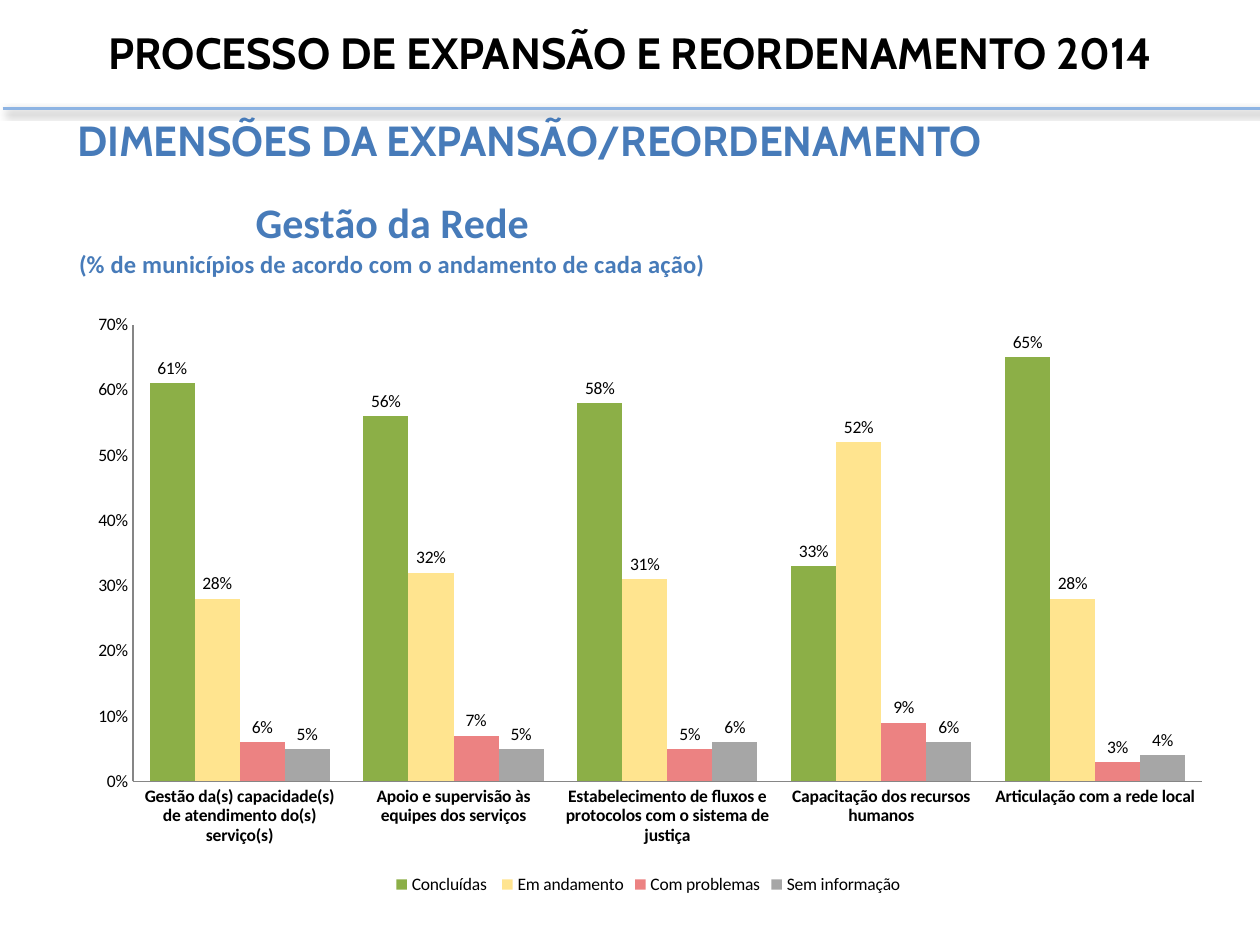
from dataclasses import dataclass

from lxml.etree import SubElement
from pptx import Presentation
from pptx.chart.data import CategoryChartData
from pptx.dml.color import RGBColor as Color
from pptx.enum.chart import XL_CHART_TYPE as ChartType
from pptx.enum.chart import XL_LABEL_POSITION as LabelPosition
from pptx.enum.chart import XL_LEGEND_POSITION as LegendPosition
from pptx.enum.chart import XL_TICK_MARK as TickMark
from pptx.enum.shapes import MSO_CONNECTOR as Connector
from pptx.enum.text import MSO_ANCHOR as Anchor
from pptx.enum.text import MSO_AUTO_SIZE as AutoSize
from pptx.enum.text import PP_ALIGN as Align
from pptx.oxml import parse_xml
from pptx.oxml.ns import nsdecls, qn
from pptx.util import Pt


@dataclass(frozen=True)
class Theme:
    heading_font: str = "Cabin"
    body_font: str = "Calibri"
    text: str = "000000"
    accent: str = "477BB9"
    rule: str = "8EB4E3"
    axis: str = "868686"
    title_size: int = 25
    subtitle_size: int = 24
    caption_size: int = 14
    chart_size: int = 10


THEME = Theme()

CATEGORIES = (
    "Gestão da(s) capacidade(s) de atendimento do(s) serviço(s)",
    "Apoio e supervisão às equipes dos serviços",
    "Estabelecimento de fluxos e protocolos com o sistema de justiça",
    "Capacitação dos recursos humanos",
    "Articulação com a rede local",
)
SERIES = (
    ("Concluídas ", "8CAF47", (0.61, 0.56, 0.58, 0.33, 0.65)),
    ("Em andamento", "FFE48F", (0.28, 0.32, 0.31, 0.52, 0.28)),
    ("Com problemas", "EC8282", (0.06, 0.07, 0.05, 0.09, 0.03)),
    ("Sem informação ", "A6A6A6", (0.05, 0.05, 0.06, 0.06, 0.04)),
)


def style_font(font, name, size, color, bold=False):
    font.name = name
    font.size = Pt(size)
    font.bold = bold
    font.color.rgb = Color.from_string(color)


def shadow_effect():
    return parse_xml(
        f'<a:effectLst {nsdecls("a")}>'
        f'<a:outerShdw blurRad="{Pt(4)}" dist="{Pt(3)}" dir="2700000" algn="tl" rotWithShape="0">'
        '<a:srgbClr val="000000"><a:alpha val="40000"/></a:srgbClr>'
        "</a:outerShdw></a:effectLst>"
    )


def set_layout(parent, inner=False, **fractions):
    layout = parent.find(qn("c:layout"))
    if layout is None:
        layout = parse_xml(f'<c:layout {nsdecls("c")}/>')
        if parent.tag == qn("c:title"):
            parent.find(qn("c:tx")).addnext(layout)
        else:
            parent.insert(0, layout)
    for child in list(layout):
        layout.remove(child)
    manual = SubElement(layout, qn("c:manualLayout"))
    if inner:
        SubElement(manual, qn("c:layoutTarget")).set("val", "inner")
    for mode in ("xMode", "yMode"):
        SubElement(manual, qn(f"c:{mode}")).set("val", "edge")
    for name, value in fractions.items():
        SubElement(manual, qn(f"c:{name}")).set("val", str(value))


def place_title(page, left, top, width, height):
    title = page.shapes.title
    title.left, title.top, title.width, title.height = map(Pt, (left, top, width, height))
    frame = title.text_frame
    frame.text = "PROCESSO DE EXPANSÃO E REORDENAMENTO 2014"
    frame.word_wrap = False
    frame.auto_size = AutoSize.NONE
    frame.vertical_anchor = Anchor.MIDDLE
    para = frame.paragraphs[0]
    para.alignment = Align.CENTER
    font = para.runs[0].font
    style_font(font, THEME.heading_font, THEME.title_size, THEME.text, True)
    para.runs[0]._r.rPr.find(qn("a:solidFill")).addnext(shadow_effect())


def place_rule(page, left, top, width):
    rule = page.shapes.add_connector(
        Connector.STRAIGHT, Pt(left), Pt(top), Pt(left + width), Pt(top)
    )
    rule.line.color.rgb = Color.from_string(THEME.rule)
    rule.line.width = Pt(1.5)
    rule._element.spPr.append(shadow_effect())


def place_subtitle(page, left, top, width, height):
    box = page.shapes.add_textbox(Pt(left), Pt(top), Pt(width), Pt(height))
    frame = box.text_frame
    frame.text = "DIMENSÕES DA EXPANSÃO/REORDENAMENTO"
    frame.word_wrap = True
    frame.auto_size = AutoSize.SHAPE_TO_FIT_TEXT
    para = frame.paragraphs[0]
    para.space_before = Pt(18)
    style_font(para.runs[0].font, THEME.heading_font, THEME.subtitle_size, THEME.accent, True)


def format_chart_title(chart):
    chart.has_title = True
    title = chart.chart_title
    frame = title.text_frame
    frame.text = "Gestão da Rede\n(% de municípios de acordo com o andamento de cada ação)"
    for para, size in zip(frame.paragraphs, (THEME.subtitle_size, THEME.caption_size)):
        para.alignment = Align.CENTER
        style_font(para.runs[0].font, THEME.body_font, size, THEME.accent, True)
    title.include_text_frame = True
    set_layout(title._element, x=0, y=0.01)


def format_axes(chart):
    for axis in (chart.category_axis, chart.value_axis):
        axis.major_tick_mark = axis.minor_tick_mark = TickMark.NONE
        axis.has_major_gridlines = False
        axis.format.line.color.rgb = Color.from_string(THEME.axis)
        axis.format.line.width = Pt(1)
    style_font(
        chart.category_axis.tick_labels.font, THEME.body_font, THEME.chart_size, THEME.text, True
    )
    values = chart.value_axis
    values.minimum_scale, values.maximum_scale, values.major_unit = 0, 0.7, 0.1
    values.tick_labels.number_format = "0%"
    values.tick_labels.number_format_is_linked = False


def format_series(plot):
    plot.gap_width = 75
    plot.overlap = 0
    plot.vary_by_categories = False
    for series, (_, color, _) in zip(plot.series, SERIES):
        series.format.fill.solid()
        series.format.fill.fore_color.rgb = Color.from_string(color)
        labels = series.data_labels
        labels.show_value = True
        labels.number_format = "0%"
        labels.number_format_is_linked = False
        labels.position = LabelPosition.OUTSIDE_END


def place_chart(page, left, top, width, height):
    data = CategoryChartData(number_format="0%")
    data.categories = CATEGORIES
    for name, _, values in SERIES:
        data.add_series(name, values)
    chart = page.shapes.add_chart(
        ChartType.COLUMN_CLUSTERED, Pt(left), Pt(top), Pt(width), Pt(height), data
    ).chart
    style_font(chart.font, THEME.body_font, THEME.chart_size, THEME.text)
    format_chart_title(chart)
    format_axes(chart)
    format_series(chart.plots[0])
    chart.has_legend = True
    chart.legend.position = LegendPosition.BOTTOM
    chart.legend.include_in_layout = False
    plot_area = chart._chartSpace.chart.plotArea
    set_layout(plot_area, inner=True, x=0.05, y=0.195, w=0.93, h=0.64)


def main():
    deck = Presentation()
    deck.slide_width, deck.slide_height = Pt(720), Pt(540)
    page = deck.slides.add_slide(deck.slide_layouts[5])
    place_title(page, 0, 0, 720, 60)
    place_rule(page, 1.5, 62, 720.5)
    place_subtitle(page, 37, 62, 663, 36)
    place_chart(page, 43, 106, 657, 408)
    deck.save("out.pptx")


if __name__ == "__main__":
    main()
